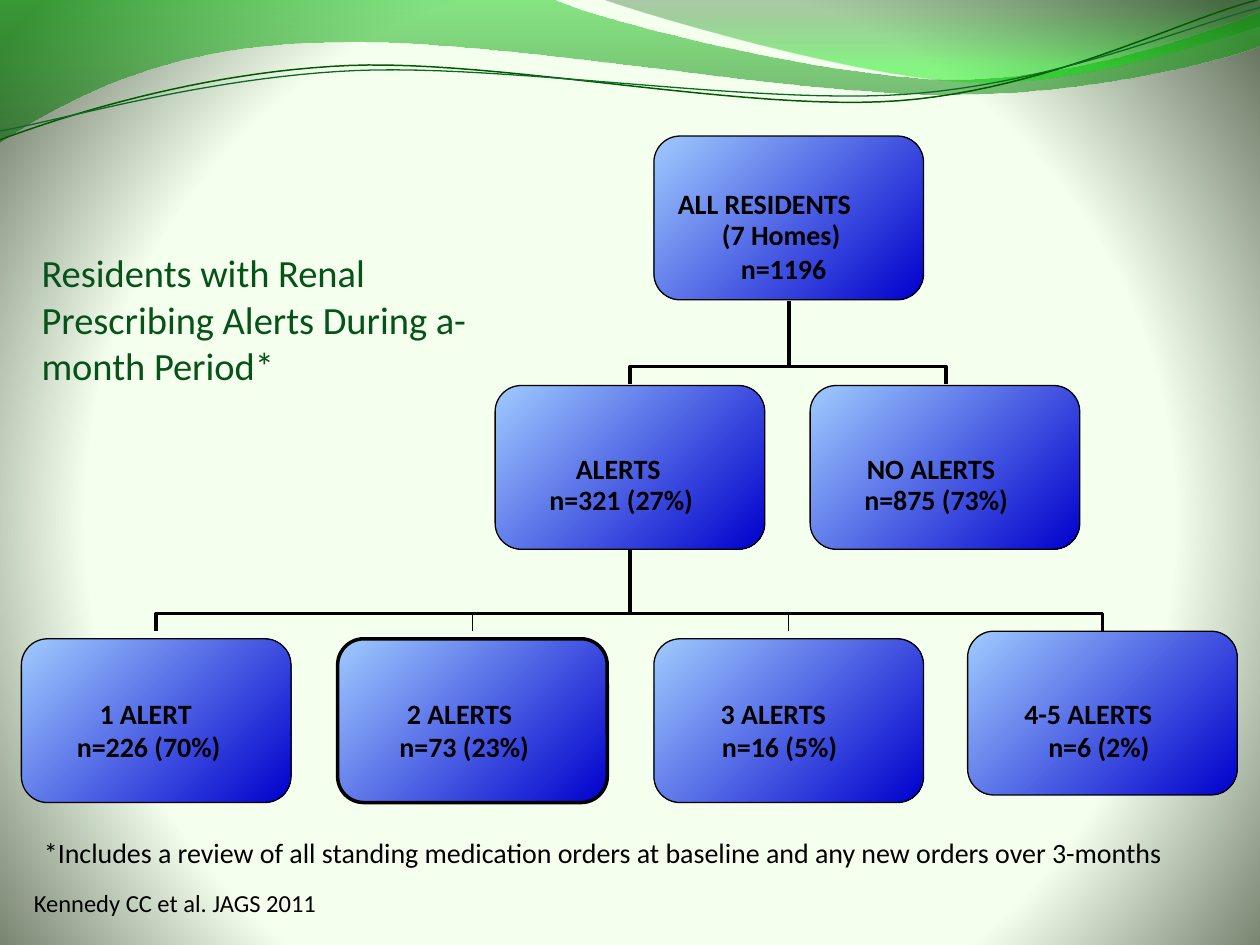
from lxml.etree import SubElement
from pptx import Presentation
from pptx.dml.color import RGBColor
from pptx.enum.shapes import MSO_SHAPE
from pptx.enum.text import MSO_ANCHOR, MSO_AUTO_SIZE, PP_ALIGN
from pptx.oxml.ns import qn
from pptx.util import Inches, Pt

FONT = "Calibri"
COLORS = {"title": "065218", "text": "000000", "line": "000000",
          "wave dark": "005A00", "wave light": "0A6A21"}

# Gradient stops: position %, colour, opacity %
BACKGROUND = [(25, "F3FFED", 100), (69, "F4FFEE", 100), (100, "687561", 100)]
BOX_FILL = [(0, "A0CBFE", 100), (100, "0000CC", 100)]

# Curves: start point, then (control, control, end) coordinates or a plain (x, y) corner
BANDS = [
    ([(0, 0), (4.4, 0), (4.76, 0.17, 6.64, 0.63, 7.58, 0.63),
      (8.53, 0.63, 9.58, 0.26, 10, 0.09), (10, 0.36),
      (9.83, 0.44, 8.7, 0.76, 7.46, 0.75), (6.22, 0.75, 3.82, 0.28, 2.57, 0.34),
      (1.29, 0.35, 0.46, 0.83, 0, 1.13)],
     [(0, "00C400", 45), (100, "005D00", 55)]),
    ([(4.79, 0), (5.09, 0.11, 6.82, 0.62, 7.69, 0.65),
      (8.56, 0.69, 9.61, 0.32, 10, 0.21), (10, 0)],
     [(0, "004B00", 30), (80, "00EA00", 45)]),
]
WAVES = [
    ([(0, 1.11), (0.48, 0.93, 1.58, 0.57, 2.77, 0.52),
      (3.95, 0.47, 5.93, 0.89, 7.13, 0.8), (8.33, 0.71, 9.38, 0.15, 9.98, 0)],
     "wave dark", 0.85),
    ([(0, 1.04), (0.47, 0.96, 1.64, 0.61, 2.83, 0.56),
      (4.03, 0.51, 5.97, 0.83, 7.17, 0.75), (8.36, 0.67, 9.41, 0.21, 10, 0.06)],
     "wave light", 0.75),
]

TITLE = "Residents with Renal Prescribing Alerts During a-month Period*"
NOTES = [
    ("*Includes a review of all standing medication orders at baseline "
     "and any new orders over 3-months", 0.25, 6.58, 9.11, 16),
    ("Kennedy CC et al. JAGS 2011", 0.17, 7, 2.47, 14),
]

BOX_WIDTH, BOX_HEIGHT, CORNER = 2.14, 1.3, 0.16
# Box: left, top, outline width, lines of (text, left, top, width)
BOXES = [
    (5.19, 1.08, 0, [("ALL RESIDENTS", 5.38, 1.48, 1.84),
                     ("(7 Homes)", 5.73, 1.73, 1.09), ("n=1196", 5.88, 2, 0.75)]),
    (3.93, 3.06, 0, [("ALERTS", 4.57, 3.58, 0.89), ("n=321 (27%)", 4.36, 3.83, 1.3)]),
    (6.43, 3.06, 0, [("NO ALERTS", 6.88, 3.58, 1.28), ("n=875 (73%)", 6.86, 3.83, 1.3)]),
    (0.17, 5.07, 0, [("1 ALERT", 0.79, 5.53, 0.92), ("n=226 (70%)", 0.61, 5.79, 1.3)]),
    (2.68, 5.07, 2, [("2 ALERTS", 3.23, 5.53, 1.07), ("n=73 (23%)", 3.17, 5.79, 1.18)]),
    (5.19, 5.07, 0, [("3 ALERTS", 5.72, 5.53, 1.07), ("n=16 (5%)", 5.73, 5.79, 1.06)]),
    (7.68, 5.01, 0, [("4-5 ALERTS", 8.13, 5.53, 1.26), ("n=6 (2%)", 8.32, 5.79, 0.93)]),
]
# Branches: parent x, parent bottom, children of (x, line width)
STEM, DROP = 0.52, 0.14
BRANCHES = [
    (5, 4.35, [(8.75, 2), (6.26, 0), (3.75, 0), (1.24, 2)]),
    (6.26, 2.39, [(7.51, 2), (5, 2)]),
]


def rgb(name):
    return RGBColor.from_string(COLORS[name])


def set_gradient(holder, stops, angle=None):
    """Replace the solid fill in holder; without an angle the gradient is circular."""
    solid = holder.find(qn("a:solidFill"))
    gradient = holder.makeelement(qn("a:gradFill"), {"rotWithShape": "1"})
    holder.replace(solid, gradient)
    stop_list = SubElement(gradient, qn("a:gsLst"))
    for position, color, opacity in stops:
        stop = SubElement(stop_list, qn("a:gs"), pos=str(position * 1000))
        value = SubElement(stop, qn("a:srgbClr"), val=color)
        if opacity < 100:
            SubElement(value, qn("a:alpha"), val=str(opacity * 1000))
    if angle is None:
        circle = SubElement(gradient, qn("a:path"), {"path": "circle"})
        SubElement(circle, qn("a:fillToRect"), l="10000", t="110000", r="10000", b="100000")
    else:
        SubElement(gradient, qn("a:lin"), ang=str(angle * 60000), scaled="0")


def fill_gradient(shape, stops, angle):
    shape.fill.solid()
    set_gradient(shape._element.spPr, stops, angle)


def flatten(curve, steps=24):
    """Turn corners and cubic curves into a list of points."""
    points = [curve[0]]
    for segment in curve[1:]:
        if len(segment) == 2:
            points.append(segment)
            continue
        x0, y0 = points[-1]
        x1, y1, x2, y2, x3, y3 = segment
        for step in range(1, steps + 1):
            t = step / steps
            a, b, c, d = (1 - t) ** 3, 3 * t * (1 - t) ** 2, 3 * t * t * (1 - t), t ** 3
            points.append((a * x0 + b * x1 + c * x2 + d * x3,
                           a * y0 + b * y1 + c * y2 + d * y3))
    return points


def add_outline(page, points, close=False):
    start, *others = [(Inches(x), Inches(y)) for x, y in points]
    builder = page.shapes.build_freeform(*start)
    builder.add_line_segments(others, close=close)
    shape = builder.convert_to_shape()
    shape.shadow.inherit = False
    return shape


def add_line(page, points, color, width):
    shape = add_outline(page, points)
    shape.fill.background()
    shape.line.color.rgb = rgb(color)
    shape.line.width = Pt(width)


def add_text(page, text, left, top, width, size, bold=False, inset=0.0):
    height = size / 60 + 2 * inset
    box = page.shapes.add_textbox(Inches(left), Inches(top), Inches(width), Inches(height))
    frame = box.text_frame
    frame.word_wrap = False
    frame.auto_size = MSO_AUTO_SIZE.SHAPE_TO_FIT_TEXT
    frame.margin_left = frame.margin_right = Inches(2 * inset)
    frame.margin_top = frame.margin_bottom = Inches(inset)
    frame.text = text
    font = frame.paragraphs[0].font
    font.name, font.size, font.bold = FONT, Pt(size), bold
    font.color.rgb = rgb("text")


def add_title(page):
    title = page.shapes.title
    title.left, title.top = Inches(0.33), Inches(1.58)
    title.width, title.height = Inches(3.42), Inches(1.5)
    frame = title.text_frame
    frame.margin_left = frame.margin_right = frame.margin_bottom = 0
    frame.margin_top = Inches(0.05)
    frame.vertical_anchor = MSO_ANCHOR.BOTTOM
    frame.word_wrap = True
    frame.auto_size = MSO_AUTO_SIZE.NONE
    frame.text = TITLE
    para = frame.paragraphs[0]
    para.alignment = PP_ALIGN.LEFT
    para.font.name, para.font.size = FONT, Pt(22)
    para.font.color.rgb = rgb("title")


def add_box(page, left, top, outline, lines):
    box = page.shapes.add_shape(MSO_SHAPE.ROUNDED_RECTANGLE, Inches(left), Inches(top),
                                Inches(BOX_WIDTH), Inches(BOX_HEIGHT))
    box.adjustments[0] = CORNER
    box.shadow.inherit = False
    fill_gradient(box, BOX_FILL, 45)
    box.line.color.rgb = rgb("line")
    box.line.width = Pt(outline)
    for line in lines:
        add_text(page, *line, size=16, bold=True)


def main():
    deck = Presentation()
    deck.slide_width, deck.slide_height = Inches(10), Inches(7.5)
    page = deck.slides.add_slide(deck.slide_layouts[5])
    page.background.fill.solid()
    set_gradient(page._element.find(".//" + qn("p:bgPr")), BACKGROUND)

    for curve, stops in BANDS:
        band = add_outline(page, flatten(curve), close=True)
        fill_gradient(band, stops, 90)
        band.line.fill.background()
    for curve, color, width in WAVES:
        add_line(page, flatten(curve), color, width)

    add_title(page)
    for x, bottom, children in BRANCHES:
        bus = bottom + STEM
        for child, width in children:
            add_line(page, [(child, bus + DROP), (child, bus), (x, bus), (x, bottom)],
                     "line", width)
    for box in BOXES:
        add_box(page, *box)
    for note in NOTES:
        add_text(page, *note, inset=0.05)
    deck.save("out.pptx")


if __name__ == "__main__":
    main()
